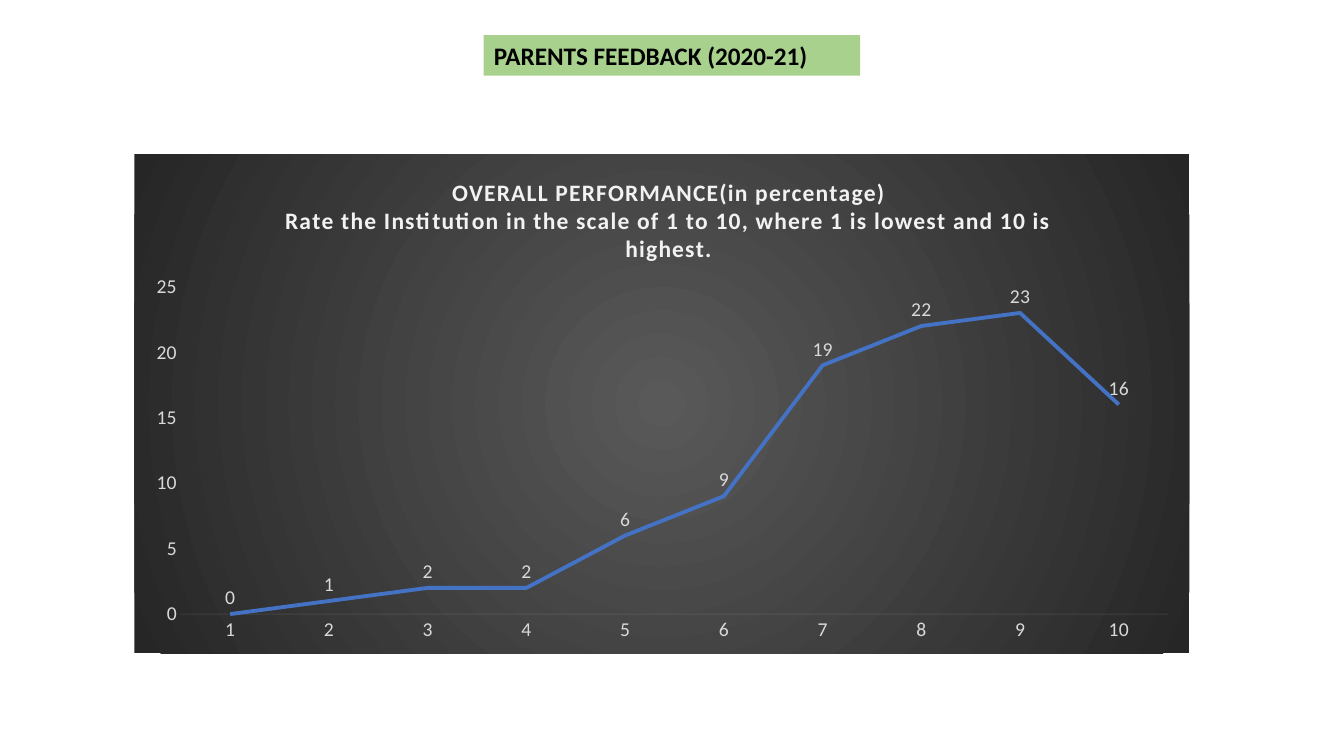
"""Build the parents' feedback slide with its overall performance line chart."""
from lxml import etree
from pptx import Presentation
from pptx.chart.data import CategoryChartData
from pptx.dml.color import RGBColor
from pptx.enum.chart import XL_CHART_TYPE, XL_LABEL_POSITION, XL_MARKER_STYLE, XL_TICK_MARK
from pptx.enum.text import MSO_ANCHOR, PP_ALIGN
from pptx.oxml import parse_xml
from pptx.oxml.ns import nsdecls, qn
from pptx.util import Pt

BLACK = RGBColor(0x00, 0x00, 0x00)
GREEN = RGBColor(0xA9, 0xD1, 0x8E)
BLUE = RGBColor(0x44, 0x72, 0xC4)
LIGHT = RGBColor(0xD9, 0xD9, 0xD9)
PALE = RGBColor(0xF2, 0xF2, 0xF2)
GREY = RGBColor(0x59, 0x59, 0x59)
DARK = RGBColor(0x26, 0x26, 0x26)
FONT = "Calibri"
RATINGS = [0, 1, 2, 2, 6, 9, 19, 22, 23, 16]


def style_font(font, size, color, bold=False):
    font.name = FONT
    font.size = Pt(size)
    font.bold = bold
    font.color.rgb = color


deck = Presentation()
deck.slide_width, deck.slide_height = Pt(960), Pt(540)
page = deck.slides.add_slide(deck.slide_layouts[5])

data = CategoryChartData()
data.categories = [str(score) for score in range(1, len(RATINGS) + 1)]
data.add_series("Series 1", RATINGS)
frame = page.shapes.add_chart(
    XL_CHART_TYPE.LINE, Pt(96), Pt(110), Pt(753.5), Pt(356.5), data)
chart = frame.chart
style_font(chart.font, 14, LIGHT)
chart.has_legend = False

chart.has_title = True
heading = chart.chart_title.text_frame
heading.text = ("OVERALL PERFORMANCE(in percentage)\n"
                "Rate the Institution in the scale of 1 to 10, where 1 is lowest and 10 is highest.")
for para in heading.paragraphs:
    for span in para.runs:
        style_font(span.font, 16.8, PALE, True)
        span.font._element.set("spc", "100")

title_layout = parse_xml(
    f'<c:layout {nsdecls("c")}><c:manualLayout><c:xMode val="edge"/><c:yMode val="edge"/>'
    '<c:x val="0.14"/><c:y val="0.04"/></c:manualLayout></c:layout>')
title_element = chart.element.find(".//" + qn("c:title"))
for old_layout in title_element.findall(qn("c:layout")):
    title_element.remove(old_layout)
title_element.find(qn("c:tx")).addnext(title_layout)

plot_layout = parse_xml(
    f'<c:layout {nsdecls("c")}><c:manualLayout><c:layoutTarget val="inner"/>'
    '<c:xMode val="edge"/><c:yMode val="edge"/><c:x val="0.044"/><c:y val="0.266"/>'
    '<c:w val="0.936"/><c:h val="0.656"/></c:manualLayout></c:layout>')
plot_area = chart.element.find(".//" + qn("c:plotArea"))
for old_layout in plot_area.findall(qn("c:layout")):
    plot_area.remove(old_layout)
plot_area.insert(0, plot_layout)

background = parse_xml(
    f'<c:spPr {nsdecls("c", "a")}><a:gradFill><a:gsLst>'
    f'<a:gs pos="0"><a:srgbClr val="{GREY}"/></a:gs>'
    f'<a:gs pos="100000"><a:srgbClr val="{DARK}"/></a:gs></a:gsLst>'
    '<a:path path="circle"><a:fillToRect l="50000" t="50000" r="50000" b="50000"/></a:path>'
    '</a:gradFill><a:ln><a:noFill/></a:ln></c:spPr>')
chart.element.find(qn("c:chart")).addnext(background)

for axis in (chart.category_axis, chart.value_axis):
    axis.has_major_gridlines = False
    axis.major_tick_mark = axis.minor_tick_mark = XL_TICK_MARK.NONE
    style_font(axis.tick_labels.font, 14, LIGHT)
chart.value_axis.minimum_scale = 0
chart.value_axis.maximum_scale = 25
chart.value_axis.major_unit = 5
chart.value_axis.format.line.fill.background()
baseline = chart.category_axis.format.line
baseline.width = Pt(0.75)
baseline.color.rgb = PALE
baseline_color = chart.category_axis._element.find(
    f'{qn("c:spPr")}/{qn("a:ln")}//{qn("a:srgbClr")}')
etree.SubElement(baseline_color, qn("a:alpha")).set("val", "10000")

plot = chart.plots[0]
plot.vary_by_categories = False
series = plot.series[0]
series.smooth = False
series.marker.style = XL_MARKER_STYLE.NONE
series.format.line.width = Pt(2.75)
series.format.line.color.rgb = BLUE
labels = series.data_labels
labels.show_value = True
labels.position = XL_LABEL_POSITION.ABOVE
style_font(labels.font, 14, LIGHT)

banner = page.shapes.title
banner.left, banner.top, banner.width, banner.height = Pt(345.5), Pt(25), Pt(269), Pt(29)
banner.fill.solid()
banner.fill.fore_color.rgb = GREEN
banner.text_frame.text = "PARENTS FEEDBACK (2020-21)"
banner.text_frame.word_wrap = True
banner.text_frame.vertical_anchor = MSO_ANCHOR.MIDDLE
para = banner.text_frame.paragraphs[0]
para.alignment = PP_ALIGN.LEFT
para.line_spacing = 1.0
style_font(para.runs[0].font, 18, BLACK, True)

deck.save("out.pptx")
